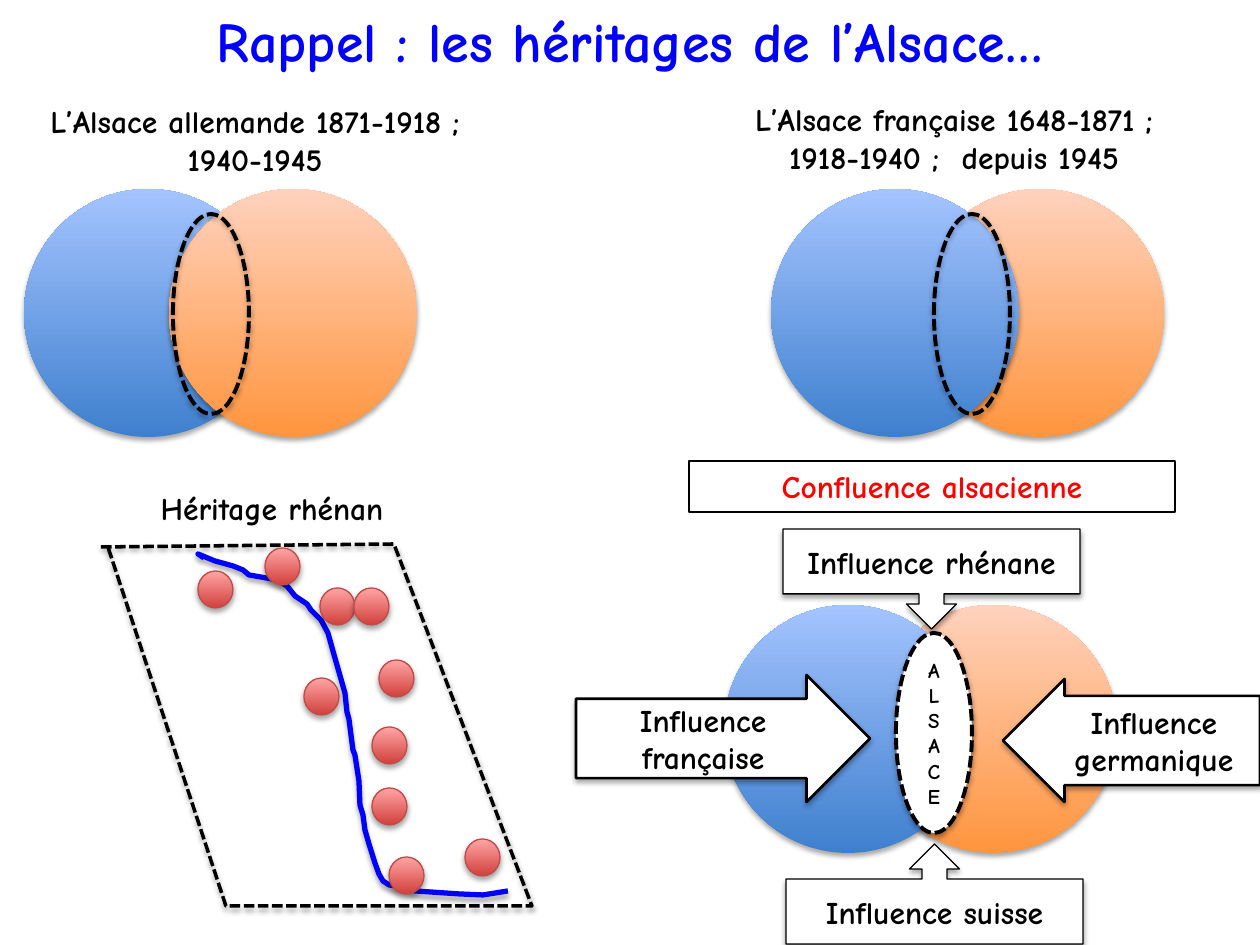
from lxml import etree
from pptx import Presentation
from pptx.dml.color import RGBColor
from pptx.enum.dml import MSO_LINE
from pptx.enum.shapes import MSO_SHAPE as Preset
from pptx.enum.text import MSO_ANCHOR as Anchor, PP_ALIGN as Align
from pptx.oxml import parse_xml
from pptx.oxml.ns import nsdecls, qn
from pptx.util import Pt

PX = 914400 / 126
BLACK = RGBColor(0x00, 0x00, 0x00)
WHITE = RGBColor(0xFF, 0xFF, 0xFF)
RED = RGBColor(0xFF, 0x00, 0x00)
BLUE = RGBColor(0x00, 0x00, 0xFF)
CITY_EDGE = RGBColor(0xBF, 0x4C, 0x48)
# Gradients run from bottom to top
FRANCE = (RGBColor(0x3F, 0x80, 0xCE), RGBColor(0xA4, 0xC4, 0xFF))
GERMANY = (RGBColor(0xFF, 0x95, 0x3E), RGBColor(0xFF, 0xD2, 0xBD))
CITY = (RGBColor(0xD1, 0x40, 0x3C), RGBColor(0xFF, 0xA6, 0xA5))

BODY = {"name": "Comic Neue", "size": Pt(18), "bold": True}
DIAMETER, CIRCLE_STEP = 248, 145
LENS_SIZE = (76, 200)
CITY_SIZE = (35, 37)

BORDER = [(1, 3), (294, 0), (432, 362), (126, 362), (8, 3)]
RHINE = [
    (408, 347), (383, 351), (359, 350), (315, 347), (307, 344), (289, 341),
    (283, 337), (279, 330), (275, 319), (269, 300), (265, 286), (263, 271),
    (260, 261), (259, 237), (255, 211), (253, 206), (249, 175), (247, 168),
    (245, 149), (241, 135), (233, 107), (228, 89), (221, 76), (211, 66),
    (207, 60), (195, 52), (187, 42), (177, 36), (166, 34), (149, 31),
    (143, 26), (133, 22), (115, 17), (98, 10), (104, 14),
]
CITIES = [
    (165, 4), (220, 44), (272, 244), (289, 313), (204, 134),
    (272, 183), (254, 44), (279, 116), (365, 295), (98, 27),
]


def emu(*lengths):
    return [round(length * PX) for length in lengths]


def paint(shape, fill=None, edge=None, width=1, dashed=False):
    """Set fill (a colour, a gradient pair or none), outline and soft shadow."""
    if fill is None:
        shape.fill.background()
    elif isinstance(fill, RGBColor):
        shape.fill.solid()
        shape.fill.fore_color.rgb = fill
    else:
        shape.fill.gradient()
        shape.fill.gradient_angle = 90
        for stop, colour in zip(shape.fill.gradient_stops, fill):
            stop.color.rgb = colour
    if edge is None:
        shape.line.fill.background()
    else:
        shape.line.color.rgb = edge
        shape.line.width = Pt(width)
        if dashed:
            shape.line.dash_style = MSO_LINE.SQUARE_DOT
    shape.shadow.inherit = False
    shadow = parse_xml(
        f'<a:outerShdw {nsdecls("a")} blurRad="39370" dist="22860" dir="5400000" '
        'rotWithShape="0"><a:srgbClr val="000000"><a:alpha val="35000"/>'
        '</a:srgbClr></a:outerShdw>')
    etree.SubElement(shape._element.spPr, qn("a:effectLst")) \
        if shape._element.spPr.find(qn("a:effectLst")) is None else None
    shape._element.spPr.find(qn("a:effectLst")).append(shadow)


def write(shape, text, anchor=Anchor.MIDDLE, colour=BLACK, wrap=True, **font):
    frame = shape.text_frame
    frame.word_wrap = wrap
    frame.vertical_anchor = anchor
    line = frame.paragraphs[0]
    line.alignment = Align.CENTER
    run = line.add_run()
    run.text = text
    for name, value in {**BODY, **font}.items():
        setattr(run.font, name, value)
    run.font.color.rgb = colour


def add_preset(shapes, preset, box, **look):
    shape = shapes.add_shape(preset, *emu(*box))
    paint(shape, **look)
    return shape


def add_label(shapes, text, box, anchor=Anchor.TOP, **font):
    label = shapes.add_textbox(*emu(*box))
    write(label, text, anchor, **font)
    return label


def add_path(shapes, origin, points, **look):
    builder = shapes.build_freeform(*points[0], scale=PX)
    builder.add_line_segments(points[1:], close=False)
    paint(builder.convert_to_shape(*emu(*origin)), **look)


def add_circles(shapes, left, top, front, lens_at, lens_fill=None):
    """Two overlapping circles, one of them in front, and a dashed lens."""
    lefts = {FRANCE: left, GERMANY: left + CIRCLE_STEP}
    for country in sorted(lefts, key=lambda country: country == front):
        add_preset(shapes, Preset.OVAL, (lefts[country], top, DIAMETER, DIAMETER),
                   fill=country)
    dx, dy = lens_at
    return add_preset(shapes, Preset.OVAL, (left + dx, top + dy, *LENS_SIZE),
                      fill=lens_fill, edge=BLACK, width=2.25, dashed=True)


def add_rhine_map(shapes, left, top):
    add_label(shapes, "Héritage rhénan", (left - 71, top - 61, 486, 50))
    region = shapes.add_group_shape().shapes
    add_path(region, (left, top), BORDER, edge=BLACK, width=2, dashed=True)
    add_path(region, (left, top), RHINE, edge=BLUE, width=3)
    for x, y in CITIES:
        add_preset(region, Preset.OVAL, (left + x, top + y, *CITY_SIZE),
                   fill=CITY, edge=CITY_EDGE, width=0.75)


def add_confluence(shapes, left, top):
    lens = add_circles(shapes, left + 148, top + 144, FRANCE, (172, 28), WHITE)
    write(lens, "ALSACE", wrap=False, size=Pt(12))
    lens.text_frame._txBody.bodyPr.set("vert", "wordArtVert")
    influences = [
        ("suisse", Preset.UP_ARROW_CALLOUT, (210, 383, 297, 100), 0.75, ()),
        ("rhénane", Preset.DOWN_ARROW_CALLOUT, (207, 68, 297, 100), 0.75, ()),
        ("française", Preset.RIGHT_ARROW, (0, 214, 294, 127), 1.5, (0.625, 0.5)),
        ("germanique", Preset.LEFT_ARROW, (427, 218, 257, 123), 1.5, (0.725, 0.5)),
    ]
    for source, preset, (x, y, w, h), width, adjustments in influences:
        arrow = add_preset(shapes, preset, (left + x, top + y, w, h),
                           fill=WHITE, edge=BLACK, width=width)
        for index, value in enumerate(adjustments):
            arrow.adjustments[index] = value
        write(arrow, f"Influence {source}")
    heading = add_label(shapes, "Confluence alsacienne",
                        (left + 113, top, 486, 51), colour=RED)
    heading.line.color.rgb = BLACK
    heading.line.width = Pt(1.5)


def main():
    deck = Presentation()
    deck.slide_width, deck.slide_height = emu(1260, 945)
    shapes = deck.slides.add_slide(deck.slide_layouts[6]).shapes

    add_label(shapes, "Rappel : les héritages de l’Alsace…", (0, 0, 1260, 81),
              Anchor.MIDDLE, colour=BLUE, size=Pt(32))
    add_circles(shapes, 24, 189, GERMANY, (149, 25))
    add_label(shapes, "L’Alsace allemande 1871-1918 ; 1940-1945", (0, 96, 510, 89))
    add_circles(shapes, 771, 189, FRANCE, (163, 25))
    add_label(shapes, "L’Alsace française 1648-1871 ; 1918-1940 ;  depuis 1945",
              (711, 94, 486, 89))
    add_rhine_map(shapes, 100, 544)
    add_confluence(shapes, 576, 461)
    deck.save("out.pptx")


if __name__ == "__main__":
    main()
